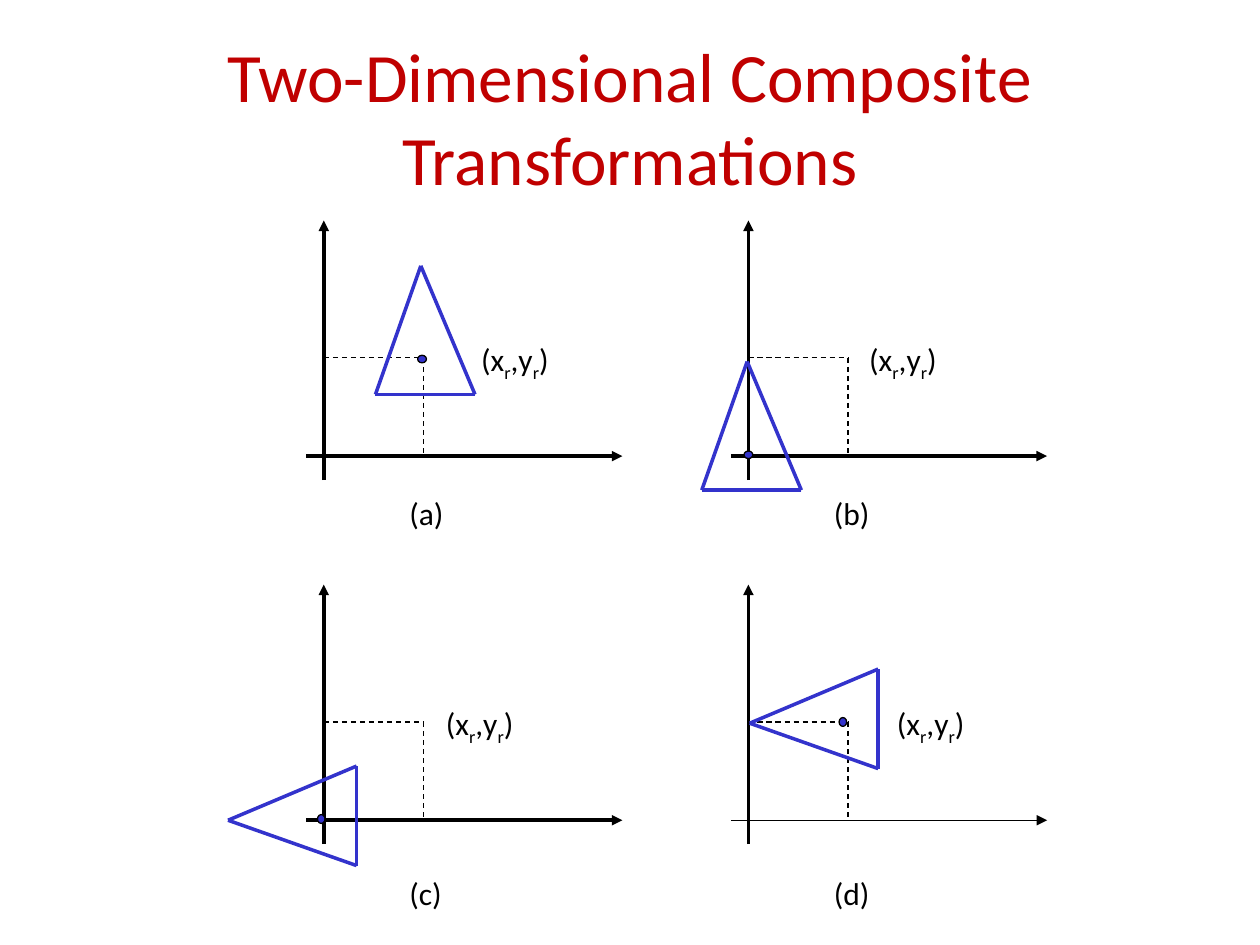
from collections import namedtuple
from lxml.etree import SubElement
from pptx import Presentation
from pptx.dml.color import RGBColor
from pptx.enum.dml import MSO_LINE
from pptx.enum.shapes import MSO_CONNECTOR, MSO_SHAPE
from pptx.enum.text import MSO_ANCHOR, PP_ALIGN
from pptx.oxml.ns import qn
from pptx.util import Inches, Pt

WIDTH, HEIGHT = Inches(10), Inches(7.5)
COLUMN, ROW = WIDTH / 100, HEIGHT / 75
BLACK, BLUE, RED = "000000", "3333CC", "C00000"
ORIGIN, PIVOT = (1.4, 18.7), (9.3, 10.9)
CORNERS = [(0, 0), (4.3, 10.2), (-3.6, 10.2)]
CENTROID = (0.1, 7.4)
DOT = (0.7, 0.6)

Box = namedtuple("Box", "left top width height")
Stage = namedtuple("Stage", "name apex turned label_left caption_top axis_weight")

STAGES = [
    Stage("(a)", (9.1, 3.6), False, 12.9, 21.2, 2),
    Stage("(b)", (1.3, 11.2), False, 10, 21.2, 2),
    Stage("(c)", (-6.2, 18.7), True, 10.1, 22.5, 2),
    Stage("(d)", (1.5, 11), True, 12.2, 22.5, 0.75),
]


def color(value):
    """Turn a hex string into a colour."""
    return RGBColor.from_string(value)


def place(box):
    """Turn a box in columns and rows into slide lengths."""
    return (round(box.left * COLUMN), round(box.top * ROW),
            round(box.width * COLUMN), round(box.height * ROW))


def add_line(page, box, start, end, ink, weight, dashed=False, arrow=False):
    """Draw a straight line between two points of a box."""
    ends = [round(value) for x, y in (start, end)
            for value in ((box.left + x) * COLUMN, (box.top + y) * ROW)]
    line = page.shapes.add_connector(MSO_CONNECTOR.STRAIGHT, *ends)
    line.line.color.rgb = color(ink)
    line.line.width = Pt(weight)
    if dashed:
        line.line.dash_style = MSO_LINE.DASH
    if arrow:
        SubElement(line.line._get_or_add_ln(), qn("a:tailEnd"), type="triangle")
    SubElement(line._element.spPr, qn("a:effectLst"))


def add_text(page, box, pieces, size, ink):
    """Write text pieces, every second one as a subscript."""
    frame = page.shapes.add_textbox(*place(box)).text_frame
    frame.word_wrap = True
    para = frame.paragraphs[0]
    for index, piece in enumerate(pieces):
        span = para.add_run()
        span.text = piece
        span.font.name = "Calibri"
        span.font.size = Pt(size)
        span.font.color.rgb = color(ink)
        if index % 2:
            span._r.get_or_add_rPr().set("baseline", "-25000")
    return frame


def add_title(page, box):
    """Write the centred slide title."""
    frame = add_text(page, box, ["Two-Dimensional Composite Transformations"], 39.6, RED)
    frame.vertical_anchor = MSO_ANCHOR.MIDDLE
    frame.paragraphs[0].alignment = PP_ALIGN.CENTER


def add_axes(page, box, weight):
    """Draw both axes and the dashed guides to the pivot."""
    x, y = ORIGIN
    add_line(page, box, (0, y), (box.width, y), BLACK, weight, arrow=True)
    add_line(page, box, (x, box.height), (x, 0), BLACK, 2, arrow=True)
    add_line(page, box, (x, PIVOT[1]), PIVOT, BLACK, 0.75, dashed=True)
    add_line(page, box, PIVOT, (PIVOT[0], y), BLACK, 0.75, dashed=True)


def add_triangle(page, box, apex, turned):
    """Draw the triangle and its centre dot, upright or turned a quarter."""
    def locate(point):
        x, y = (point[1], -point[0]) if turned else point
        return apex[0] + x, apex[1] + y

    corners = [locate(corner) for corner in CORNERS]
    for start, end in zip(corners, corners[1:] + corners[:1]):
        add_line(page, box, start, end, BLUE, 2)
    x, y = locate(CENTROID)
    width, height = DOT
    dot_box = Box(box.left + x - width / 2, box.top + y - height / 2, width, height)
    dot = page.shapes.add_shape(MSO_SHAPE.OVAL, *place(dot_box))
    dot.rotation = 270 if turned else 0
    dot.shadow.inherit = False
    dot.fill.solid()
    dot.fill.fore_color.rgb = color(BLUE)
    dot.line.color.rgb = color(BLACK)
    dot.line.width = Pt(0.75)


def add_stage(page, box, stage):
    """Draw one stage of the transformation with its labels."""
    add_axes(page, box, stage.axis_weight)
    add_triangle(page, box, stage.apex, stage.turned)
    label = Box(box.left + stage.label_left, box.top + 9, 10, 3.3)
    add_text(page, label, ["(x", "r", ",y", "r", ")"], 18, BLACK)
    caption = Box(box.left + 7.2, box.top + stage.caption_top, 10, 3.3)
    add_text(page, caption, [stage.name], 18, BLACK)


def main():
    """Build the slide and save it."""
    deck = Presentation()
    deck.slide_width, deck.slide_height = WIDTH, HEIGHT
    page = deck.slides.add_slide(deck.slide_layouts[6])
    add_title(page, Box(5, 3, 90, 12.5))
    for index, stage in enumerate(STAGES):
        row, column = divmod(index, 2)
        box = Box(24.3 + 33.7 * column, 17.5 + 28.9 * row, 25.1, 20.6)
        add_stage(page, box, stage)
    deck.save("out.pptx")


if __name__ == "__main__":
    main()
